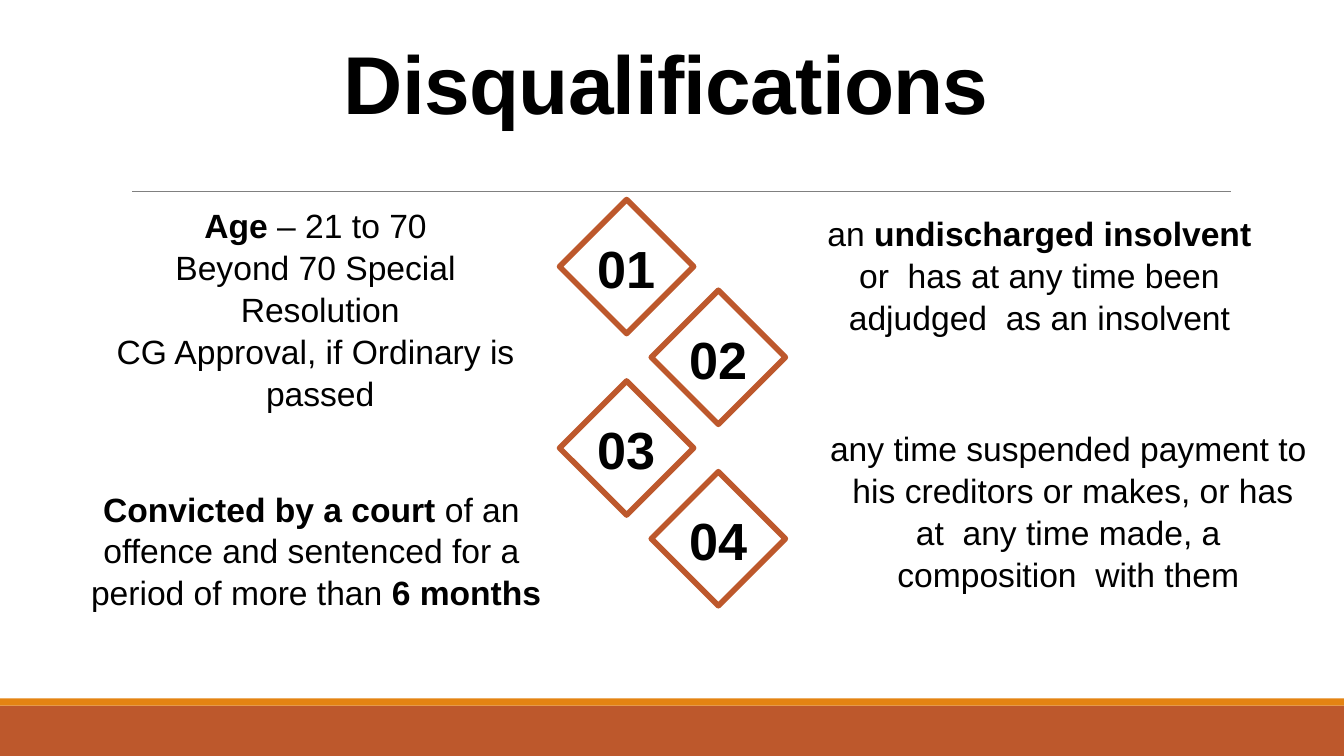
"""Builds a slide listing four disqualifications around numbered diamonds."""
from lxml import etree
from pptx import Presentation
from pptx import util as u
from pptx.dml.color import RGBColor
from pptx.enum import shapes, text
from pptx.oxml.ns import qn

HUES = {"rust": "BD582C", "amber": "E48312", "gray": "808080", "ink": "000000"}
WIDE, HIGH = 13.33, 7.5
LEFT, MID = text.PP_ALIGN.LEFT, text.PP_ALIGN.CENTER
TOP, BASE = text.MSO_ANCHOR.TOP, text.MSO_ANCHOR.BOTTOM


def hue(name):
    return RGBColor.from_string(HUES[name])


def write(shape, paras, size, align, anchor, wrap=True, lead=1.0, track=0):
    frame = shape.text_frame
    frame.word_wrap = wrap
    frame.vertical_anchor = anchor
    frame.margin_left = frame.margin_right = frame.margin_bottom = 0
    frame.margin_top = u.Inches(0.02)
    for i, (inset, runs) in enumerate(paras):
        para = frame.add_paragraph() if i else frame.paragraphs[0]
        para.alignment = align
        para.line_spacing = lead
        para.space_before = u.Pt(0 if i else 1.3)
        for side in ("marL", "marR"):
            para._p.get_or_add_pPr().set(side, str(u.Inches(inset)))
        for words, bold in runs:
            run = para.add_run()
            run.text = words
            run.font.name = "Arial"
            run.font.size = u.Pt(size)
            run.font.bold = bold
            run.font.color.rgb = hue("ink")
            if track:
                run._r.get_or_add_rPr().set("spc", str(track))


deck = Presentation()
deck.slide_width, deck.slide_height = u.Inches(WIDE), u.Inches(HIGH)
slide = deck.slides.add_slide(deck.slide_layouts[6])
items = slide.shapes

foot, strip = HIGH / 15, 0.07
for name, top, tall in (("rust", HIGH - foot, foot),
                        ("amber", HIGH - foot - strip, strip)):
    bar = items.add_shape(shapes.MSO_SHAPE.RECTANGLE, 0, u.Inches(top),
                          deck.slide_width, u.Inches(tall))
    bar.shadow.inherit = False
    bar.fill.solid()
    bar.fill.fore_color.rgb = hue(name)
    bar.line.fill.background()

rule = items.add_connector(shapes.MSO_CONNECTOR.STRAIGHT, u.Inches(1.31),
                           u.Inches(1.9), u.Inches(12.21), u.Inches(1.9))
rule.line.color.rgb = hue("gray")
rule.line.width = u.Pt(0.5)
etree.SubElement(rule._element.spPr, qn("a:effectLst"))

title = items.add_textbox(*map(u.Inches, (3.39, 0.3, 6.55, 1)))
write(title, [(0.02, [("Disqualifications", True)])], 58.6, LEFT, BASE, track=-50)

side, step = 1.33, 0.9
for i in range(4):
    left, top = 5.55 + i % 2 * 0.91, 1.98 + i * step
    gem = items.add_shape(shapes.MSO_SHAPE.DIAMOND,
                          *map(u.Inches, (left, top, side, side)))
    gem.shadow.inherit = False
    gem.fill.background()
    gem.line.color.rgb = hue("rust")
    gem.line.width = u.Pt(4)
    etree.SubElement(gem.line._get_or_add_ln(), qn("a:round"))
    write(gem, [(0, [(f"{i + 1:02}", True)])], 37.3, MID,
          text.MSO_ANCHOR.MIDDLE, wrap=False)

notes = [
    ((1.13, 2, 4, 2.04), [
        (0.01, [("Age ", True), ("– 21 to 70", False)]),
        (0.61, [("Beyond 70 Special  Resolution", False)]),
        (0.01, [("CG Approval, if Ordinary is  passed", False)])]),
    ((8.01, 2.08, 4.6, 1.23), [
        (0.1, [("an ", False), ("undischarged insolvent ", True),
               ("or  has at any time been adjudged  as an insolvent", False)])]),
    ((8.21, 4.21, 4.77, 1.63), [
        (0.01, [("any time suspended payment to  his creditors or makes, or has "
                 "at  any time made, a composition  with them", False)])]),
    ((0.83, 4.81, 4.61, 1.23), [
        (0.02, [("Convicted by a court ", True),
                ("of an  offence and sentenced for a  period of more than ", False),
                ("6 months", True)])]),
]
for box, paras in notes:
    note = items.add_textbox(*map(u.Inches, box))
    write(note, paras, 24, MID, TOP, lead=1.04)

deck.save("out.pptx")
